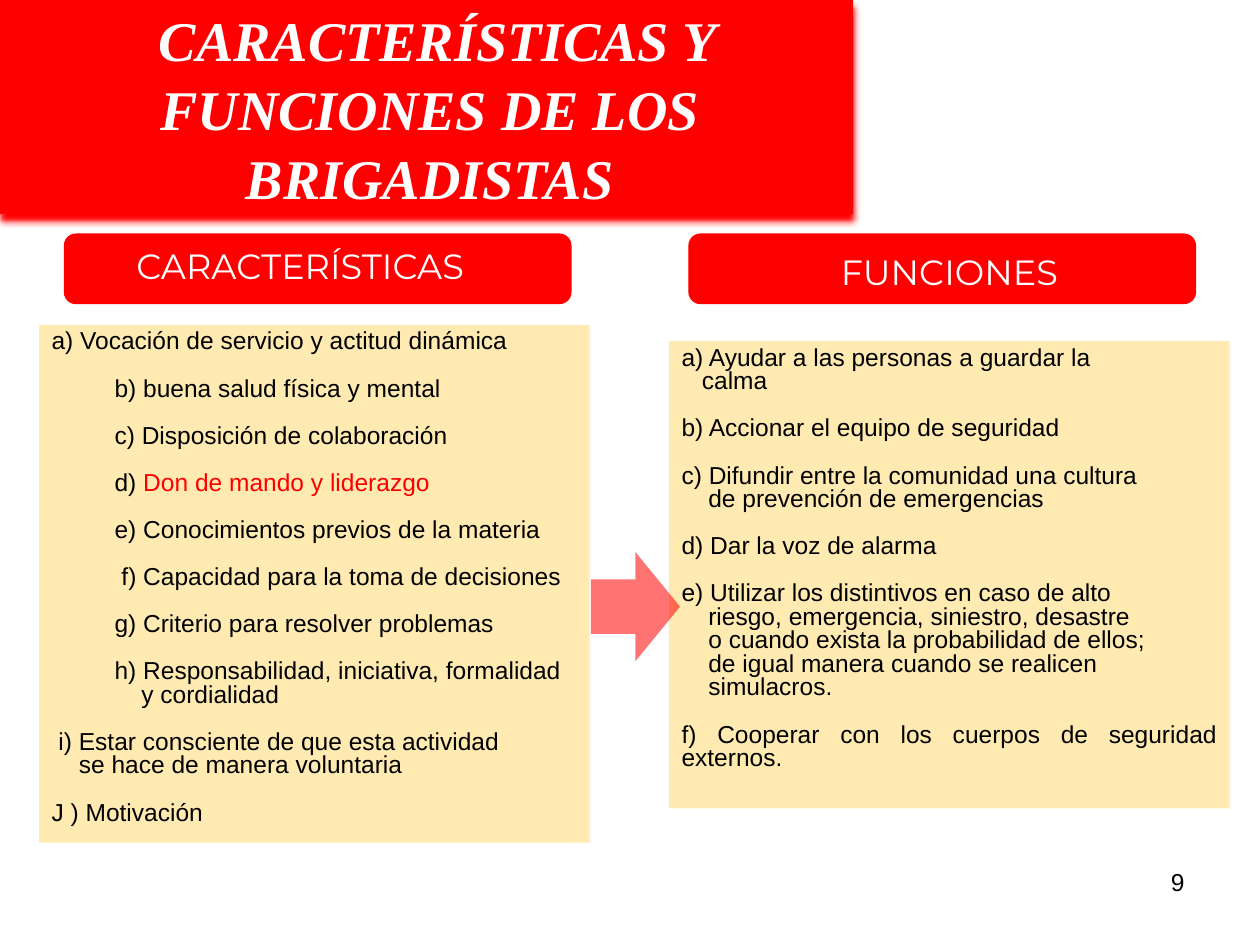
from dataclasses import dataclass

import pptx
import pptx.dml.color
import pptx.enum.shapes
import pptx.enum.text
import pptx.oxml
import pptx.oxml.ns
import pptx.util
from pptx.util import Cm

SHAPE = pptx.enum.shapes.MSO_SHAPE
ALIGN = pptx.enum.text.PP_ALIGN
ANCHOR = pptx.enum.text.MSO_ANCHOR


@dataclass(frozen=True)
class Theme:
    red: str = "FF0000"
    amber: str = "FFC000"
    white: str = "FFFFFF"
    black: str = "000000"
    title_font: str = "Times New Roman"
    label_font: str = "Montserrat"
    body_font: str = "Arial"
    title_size: float = 32
    label_size: float = 20
    body_size: float = 14
    item_gap: float = 13.5


class SlideBuilder:
    def __init__(self, slide, theme):
        self.slide = slide
        self.theme = theme

    def shape(self, kind, box, fill, alpha=None, line=None):
        shape = self.slide.shapes.add_shape(kind, *map(Cm, box))
        shape.shadow.inherit = False
        shape.fill.solid()
        shape.fill.fore_color.rgb = pptx.dml.color.RGBColor.from_string(fill)
        if alpha is not None:
            colour = shape.fill._xPr.find(".//" + pptx.oxml.ns.qn("a:srgbClr"))
            opacity = pptx.oxml.parse_xml(
                f'<a:alpha {pptx.oxml.ns.nsdecls("a")} val="{alpha * 1000}"/>')
            colour.append(opacity)
        if line:
            shape.line.color.rgb = pptx.dml.color.RGBColor.from_string(line)
            shape.line.width = pptx.util.Pt(0.75)
        else:
            shape.line.fill.background()
        return shape

    def glow(self, shape):
        """Red drop shadow, 4 pt below the shape."""
        distance = pptx.util.Pt(4)
        effects = shape._element.spPr.find(pptx.oxml.ns.qn("a:effectLst"))
        effects.append(pptx.oxml.parse_xml(
            f'<a:outerShdw {pptx.oxml.ns.nsdecls("a")} blurRad="{distance}" '
            f'dist="{distance}" dir="5400000">'
            f'<a:srgbClr val="{self.theme.red}"/></a:outerShdw>'))

    def run(self, paragraph, text, font, size, colour, strong=False):
        run = paragraph.add_run()
        run.text = text
        run.font.name = font
        run.font.size = pptx.util.Pt(size)
        run.font.color.rgb = pptx.dml.color.RGBColor.from_string(colour)
        if strong:
            run.font.bold = run.font.italic = True

    def frame(self, shape, anchor=ANCHOR.TOP):
        frame = shape.text_frame
        frame.word_wrap = True
        frame.auto_size = pptx.enum.text.MSO_AUTO_SIZE.NONE
        frame.vertical_anchor = anchor
        return frame

    def title(self, text, box):
        title = self.slide.shapes.title
        title.left, title.top, title.width, title.height = map(Cm, box)
        paragraph = self.frame(title, ANCHOR.MIDDLE).paragraphs[0]
        paragraph.alignment = ALIGN.CENTER
        paragraph.line_spacing = 1.03
        self.run(paragraph, text, self.theme.title_font, self.theme.title_size,
                 self.theme.white, strong=True)
        # Bring the title in front of its band
        self.slide.shapes._spTree.append(title._element)

    def heading(self, text, pill_box, label_box, align):
        theme = self.theme
        self.shape(SHAPE.ROUNDED_RECTANGLE, pill_box, theme.red, line=theme.red)
        label = self.shape(SHAPE.RECTANGLE, label_box, theme.red)
        paragraph = self.frame(label).paragraphs[0]
        paragraph.alignment = align
        self.run(paragraph, text, theme.label_font, theme.label_size, theme.white)

    def panel(self, box, items):
        """Items are (lines, left margin, hanging indent, alignment); * marks red text."""
        theme = self.theme
        frame = self.frame(self.shape(SHAPE.RECTANGLE, box, theme.amber, alpha=30))
        for index, (lines, margin, indent, align) in enumerate(items):
            paragraph = frame.add_paragraph() if index else frame.paragraphs[0]
            paragraph.alignment = align
            paragraph.line_spacing = 0.8
            if index:
                paragraph.space_before = pptx.util.Pt(theme.item_gap)
            properties = paragraph._p.get_or_add_pPr()
            properties.set("marL", str(Cm(margin)))
            properties.set("indent", str(Cm(indent)))
            for number, line in enumerate(lines):
                if number:
                    paragraph.add_line_break()
                for part, text in enumerate(line.split("*")):
                    self.run(paragraph, text, theme.body_font, theme.body_size,
                             theme.red if part else theme.black)

    def page_number(self, text, box):
        number = self.slide.shapes.add_textbox(*map(Cm, box))
        paragraph = self.frame(number).paragraphs[0]
        paragraph.alignment = ALIGN.RIGHT
        self.run(paragraph, text, self.theme.body_font, self.theme.body_size,
                 self.theme.black)


def item(*lines, margin=0, hang=0.0, align=ALIGN.LEFT):
    return lines, margin + hang, -hang, align


def main():
    prs = pptx.Presentation()
    prs.slide_width, prs.slide_height = Cm(25.4), Cm(19.05)
    theme = Theme()
    page = SlideBuilder(prs.slides.add_slide(prs.slide_layouts[5]), theme)

    # Title band and page number
    band = page.shape(SHAPE.ROUNDED_RECTANGLE, (0, 0, 17.2, 4.32), theme.red)
    band.adjustments[0] = 0
    page.glow(band)
    page.page_number("9", (18.21, 17.35, 5.92, 1.32))

    # Traits of the brigade members
    step, hang = 1.27, 0.54
    page.panel((0.79, 6.55, 11.1, 10.44), [
        item("a) Vocación de servicio y actitud dinámica"),
        item("b) buena salud física y mental", margin=step),
        item("c) Disposición de colaboración", margin=step),
        item("d) *Don de mando y liderazgo", margin=step),
        item("e) Conocimientos previos de la materia", margin=step),
        item("f) Capacidad para la toma de decisiones", margin=step + 0.14),
        item("g) Criterio para resolver problemas", margin=step),
        item("h) Responsabilidad, iniciativa, formalidad", "y cordialidad",
             margin=step, hang=hang),
        item("i) Estar consciente de que esta actividad",
             "se hace de manera voluntaria", margin=0.14, hang=0.41),
        item("J ) Motivación"),
    ])

    # Their functions
    page.panel((13.49, 6.88, 11.3, 9.42), [
        item("a) Ayudar a las personas a guardar la", "calma", hang=0.41),
        item("b) Accionar el equipo de seguridad"),
        item("c) Difundir entre la comunidad una cultura",
             "de prevención de emergencias", hang=hang),
        item("d) Dar la voz de alarma"),
        item("e) Utilizar los distintivos en caso de alto",
             "riesgo, emergencia, siniestro, desastre",
             "o cuando exista la probabilidad de ellos;",
             "de igual manera cuando se realicen", "simulacros.", hang=hang),
        item("f) Cooperar con los cuerpos de seguridad externos.",
             align=ALIGN.JUSTIFY),
    ])

    # Arrow from traits to functions
    page.shape(SHAPE.RIGHT_ARROW, (11.91, 11.13, 1.8, 2.2), theme.red, alpha=55)

    # Column headings
    for text, left, label_top, align in (
            ("CARACTERÍSTICAS", 1.3, 4.8, ALIGN.LEFT),
            ("FUNCIONES", 13.89, 4.93, ALIGN.CENTER)):
        page.heading(text, (left, 4.72, 10.21, 1.4),
                     (left + 1.2, label_top, 8.1, 1.12), align)

    page.title(" CARACTERÍSTICAS Y FUNCIONES DE LOS BRIGADISTAS",
               (0.64, 0, 16.05, 4.32))
    prs.save("out.pptx")


if __name__ == "__main__":
    main()
